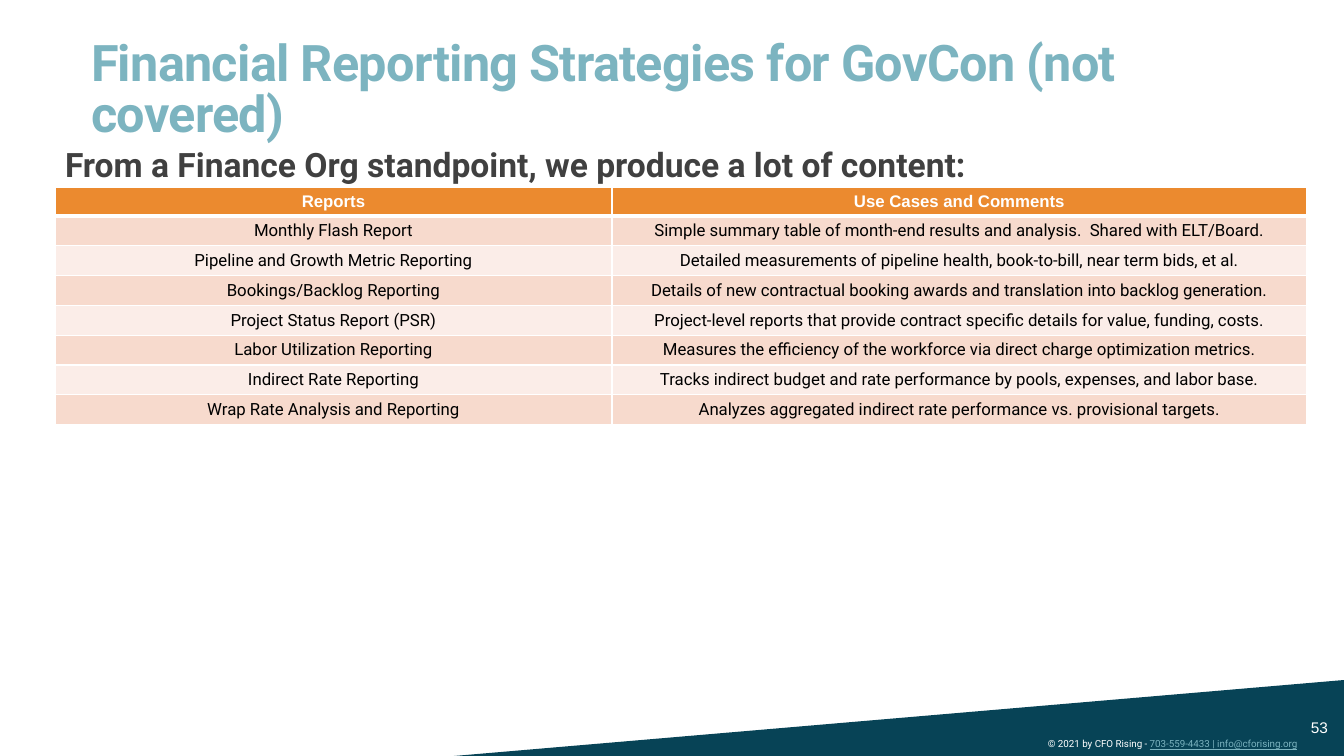
from dataclasses import dataclass

from lxml.etree import SubElement
from pptx import Presentation
from pptx.dml.color import RGBColor
from pptx.enum.shapes import MSO_SHAPE
from pptx.enum.text import MSO_ANCHOR, MSO_AUTO_SIZE, PP_ALIGN
from pptx.oxml.ns import qn
from pptx.util import Pt


@dataclass(frozen=True)
class Theme:
    heading_font: str = "Roboto"
    plain_font: str = "Arial"
    white: str = "FFFFFF"
    black: str = "000000"
    aqua: str = "7CB4C0"
    navy: str = "074356"
    charcoal: str = "404040"
    orange: str = "EB8A2F"
    bands: tuple = ("F7DACD", "FBEDE8")
    title_size: int = 36
    lead_size: int = 24
    table_size: int = 12
    number_size: int = 11
    footer_size: int = 7


THEME = Theme()
EMU_PER_PX = 914400 / 100.8

REPORTS = [
    ("Reports", "Use Cases and Comments"),
    ("Monthly Flash Report",
     "Simple summary table of month-end results and analysis.  Shared with ELT/Board."),
    ("Pipeline and Growth Metric Reporting",
     "Detailed measurements of pipeline health, book-to-bill, near term bids, et al."),
    ("Bookings/Backlog Reporting",
     "Details of new contractual booking awards and translation into backlog generation."),
    ("Project Status Report (PSR)",
     "Project-level reports that provide contract specific details for value, funding, costs."),
    ("Labor Utilization Reporting",
     "Measures the efficiency of the workforce via direct charge optimization metrics."),
    ("Indirect Rate Reporting",
     "Tracks indirect budget and rate performance by pools, expenses, and labor base."),
    ("Wrap Rate Analysis and Reporting",
     "Analyzes aggregated indirect rate performance vs. provisional targets."),
]


def px(length):
    return round(length * EMU_PER_PX)


def place(shape, box):
    shape.left, shape.top, shape.width, shape.height = map(px, box)


def add_run(paragraph, text, size, color, font=THEME.heading_font, bold=False, underline=False):
    run = paragraph.add_run()
    run.text = text
    run.font.name = font
    run.font.size = Pt(size)
    run.font.bold = bold
    run.font.underline = underline
    run.font.color.rgb = RGBColor.from_string(color)
    return run


def prepare_frame(shape, anchor):
    """Fix the frame's wrapping and anchor, and return its first paragraph."""
    frame = shape.text_frame
    frame.word_wrap = True
    frame.auto_size = MSO_AUTO_SIZE.NONE
    frame.vertical_anchor = anchor
    paragraph = frame.paragraphs[0]
    paragraph.alignment = PP_ALIGN.LEFT
    paragraph.space_before = Pt(0)
    return paragraph


def fill_title(title, box):
    place(title, box)
    paragraph = prepare_frame(title, MSO_ANCHOR.BOTTOM)
    paragraph.line_spacing = 0.85
    run = add_run(paragraph, "Financial Reporting Strategies for GovCon (not covered)",
                  THEME.title_size, THEME.aqua, bold=True)
    run.font._element.set("spc", "-50")


def fill_lead(body, box):
    place(body, box)
    paragraph = prepare_frame(body, MSO_ANCHOR.TOP)
    body.text_frame.margin_left = body.text_frame.margin_right = 0
    properties = paragraph._p.get_or_add_pPr()
    properties.set("marL", str(px(10)))
    properties.set("indent", "0")
    SubElement(properties, qn("a:buNone"))
    add_run(paragraph, "From a Finance Org standpoint, we produce a lot of content:",
            THEME.lead_size, THEME.charcoal, bold=True)


def add_borders(cell, top, bottom):
    """Draw white cell edges; top and bottom are widths in points."""
    properties = cell._tc.get_or_add_tcPr()
    for edge, width in (("lnL", 1), ("lnR", 1), ("lnT", top), ("lnB", bottom)):
        line = SubElement(properties, qn(f"a:{edge}"), w=str(Pt(width)))
        fill = SubElement(line, qn("a:solidFill"))
        SubElement(fill, qn("a:srgbClr"), val=THEME.white)


def add_reports_table(slide, box):
    left, top, width, height = box
    table = slide.shapes.add_table(len(REPORTS), 2, *map(px, box)).table
    first_width = 557
    for column, column_width in zip(table.columns, (first_width, width - first_width)):
        column.width = px(column_width)
    for index, texts in enumerate(REPORTS):
        header = index == 0
        table.rows[index].height = px(height / len(REPORTS))
        for column, text in enumerate(texts):
            cell = table.cell(index, column)
            add_borders(cell, 3 if index == 1 else 1, 3 if header else 1)
            cell.fill.solid()
            cell.fill.fore_color.rgb = RGBColor.from_string(
                THEME.orange if header else THEME.bands[(index - 1) % 2])
            paragraph = cell.text_frame.paragraphs[0]
            paragraph.alignment = PP_ALIGN.CENTER
            add_run(paragraph, text, THEME.table_size,
                    THEME.white if header else THEME.black,
                    THEME.plain_font if header else THEME.heading_font, header)


def add_footer(slide, box):
    left, top, width, height = box
    wedge = slide.shapes.add_shape(MSO_SHAPE.RIGHT_TRIANGLE, *map(px, box))
    wedge.shadow.inherit = False
    wedge.fill.solid()
    wedge.fill.fore_color.rgb = RGBColor.from_string(THEME.navy)
    wedge.line.fill.background()
    wedge._element.spPr.xfrm.set("flipH", "1")

    right = left + width
    copyright_box = (right - 306, top + 53, 306, 23)
    copyright_line = slide.shapes.add_textbox(*map(px, copyright_box))
    paragraph = prepare_frame(copyright_line, MSO_ANCHOR.TOP)
    add_run(paragraph, "© 2021 by CFO Rising - ", THEME.footer_size, THEME.white)
    add_run(paragraph, "703-559-4433 | info@cforising.org", THEME.footer_size,
            THEME.aqua, underline=True)

    number_box = (right - 43, top + 27, 43, 40)
    number = slide.shapes.add_textbox(*map(px, number_box))
    add_run(prepare_frame(number, MSO_ANCHOR.MIDDLE), "53", THEME.number_size,
            THEME.white, THEME.plain_font)


def build_reporting_slide(presentation):
    slide = presentation.slides.add_slide(presentation.slide_layouts[1])
    add_footer(slide, (454, 680, 890, 76))
    fill_title(slide.shapes.title, (81, 56, 1124, 92))
    fill_lead(slide.placeholders[1], (55, 139, 1234, 60))
    add_reports_table(slide, (55, 187, 1252, 216))


def main():
    presentation = Presentation()
    presentation.slide_width = px(1344)
    presentation.slide_height = px(756)
    build_reporting_slide(presentation)
    presentation.save("out.pptx")


if __name__ == "__main__":
    main()
